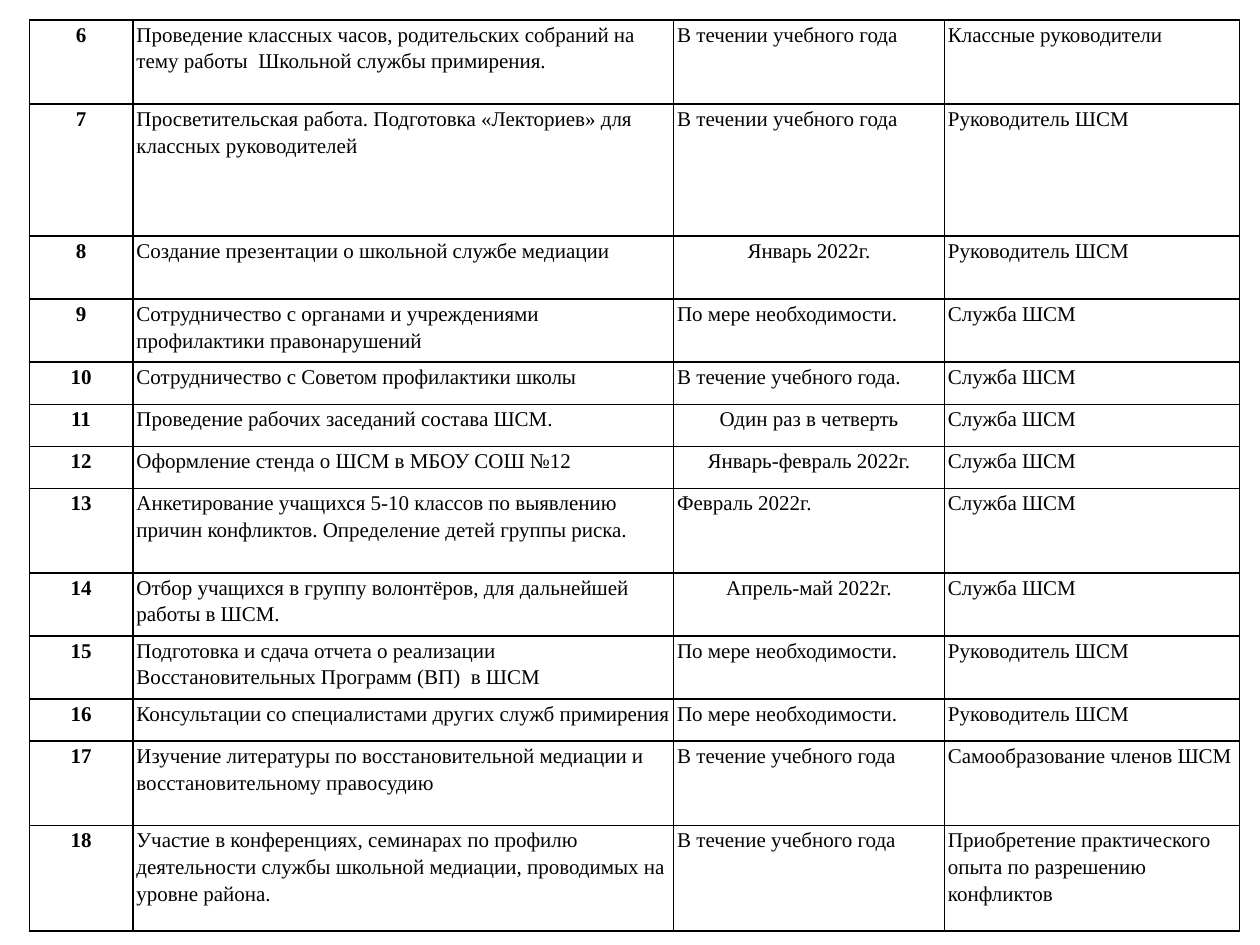
from lxml import etree
from pptx import Presentation
from pptx import util as u
from pptx.dml.color import RGBColor
from pptx.enum import text as t
from pptx.oxml.ns import qn

BLACK = RGBColor(0x00, 0x00, 0x00)
FONT = "Times New Roman"
LEFT, CENTER = t.PP_ALIGN.LEFT, t.PP_ALIGN.CENTER

# Height in cm, task, date, date alignment, who is responsible
PLAN = [
    (1.7, "Проведение классных часов, родительских собраний на тему работы  Школьной службы примирения.",
     "В течении учебного года", LEFT, "Классные руководители"),
    (2.66, "Просветительская работа. Подготовка «Лекториев» для классных руководителей",
     "В течении учебного года", LEFT, "Руководитель ШСМ"),
    (1.27, "Создание презентации о школьной службе медиации",
     "Январь 2022г.", CENTER, "Руководитель ШСМ"),
    (1.27, "Сотрудничество с органами и учреждениями профилактики правонарушений",
     "По мере необходимости.", LEFT, "Служба ШСМ"),
    (0.85, "Сотрудничество с Советом профилактики школы",
     "В течение учебного года.", LEFT, "Служба ШСМ"),
    (0.85, "Проведение рабочих заседаний состава ШСМ.",
     "Один раз в четверть", CENTER, "Служба ШСМ"),
    (0.85, "Оформление стенда о ШСМ в МБОУ СОШ №12",
     "Январь-февраль 2022г.", CENTER, "Служба ШСМ"),
    (1.7, "Анкетирование учащихся 5-10 классов по выявлению причин конфликтов. Определение детей группы риска.",
     "Февраль 2022г.", LEFT, "Служба ШСМ"),
    (1.27, "Отбор учащихся в группу волонтёров, для дальнейшей работы в ШСМ.",
     "Апрель-май 2022г.", CENTER, "Служба ШСМ"),
    (1.27, "Подготовка и сдача отчета о реализации Восстановительных Программ (ВП)  в ШСМ",
     "По мере необходимости.", LEFT, "Руководитель ШСМ"),
    (0.85, "Консультации со специалистами других служб примирения",
     "По мере необходимости.", LEFT, "Руководитель ШСМ"),
    (1.7, "Изучение литературы по восстановительной медиации и восстановительному правосудию",
     "В течение учебного года", LEFT, "Самообразование членов ШСМ"),
    (2.13, "Участие в конференциях, семинарах по профилю деятельности службы школьной медиации, "
     "проводимых на уровне района.",
     "В течение учебного года", LEFT, "Приобретение практического опыта по разрешению конфликтов"),
]
FIRST_NUMBER = 6
COLUMN_WIDTHS = [2.09, 10.9, 5.46, 5.95]


def write(cell, words, *, align=LEFT, bold=False, after=0):
    cell.margin_left = cell.margin_right = u.Cm(0.07)
    cell.margin_top = cell.margin_bottom = 0
    paragraph = cell.text_frame.paragraphs[0]
    paragraph.alignment = align
    paragraph.line_spacing = 1.15
    paragraph.space_after = u.Pt(after)
    run = paragraph.add_run()
    run.text = words
    run.font.name = FONT
    run.font.size = u.Pt(12)
    run.font.bold = bold
    run.font.color.rgb = BLACK


def outline(cell):
    properties = cell._tc.get_or_add_tcPr()
    for side in ("a:lnL", "a:lnR", "a:lnT", "a:lnB"):
        line = etree.SubElement(properties, qn(side), w=str(u.Pt(1)))
        fill = etree.SubElement(line, qn("a:solidFill"))
        etree.SubElement(fill, qn("a:srgbClr"), val=str(BLACK))


prs = Presentation()
prs.slide_width, prs.slide_height = u.Cm(25.4), u.Cm(19.05)
slide = prs.slides.add_slide(prs.slide_layouts[6])

# Table grid
plan = slide.shapes.add_table(
    len(PLAN), len(COLUMN_WIDTHS), u.Cm(0.59), u.Cm(0.4),
    u.Cm(sum(COLUMN_WIDTHS)), u.Cm(sum(entry[0] for entry in PLAN))).table
plan.first_row = plan.horz_banding = False
for column, width in zip(plan.columns, COLUMN_WIDTHS):
    column.width = u.Cm(width)

# Plan entries
for index, (height, task, date, date_align, responsible) in enumerate(PLAN):
    plan.rows[index].height = u.Cm(height)
    number_cell, task_cell, date_cell, responsible_cell = plan.rows[index].cells
    write(number_cell, str(FIRST_NUMBER + index), align=CENTER, bold=True)
    write(task_cell, task, after=10)
    write(date_cell, date, align=date_align)
    write(responsible_cell, responsible)

# Borders and empty fill
for cell in plan.iter_cells():
    outline(cell)
    cell.fill.background()

prs.save("out.pptx")
